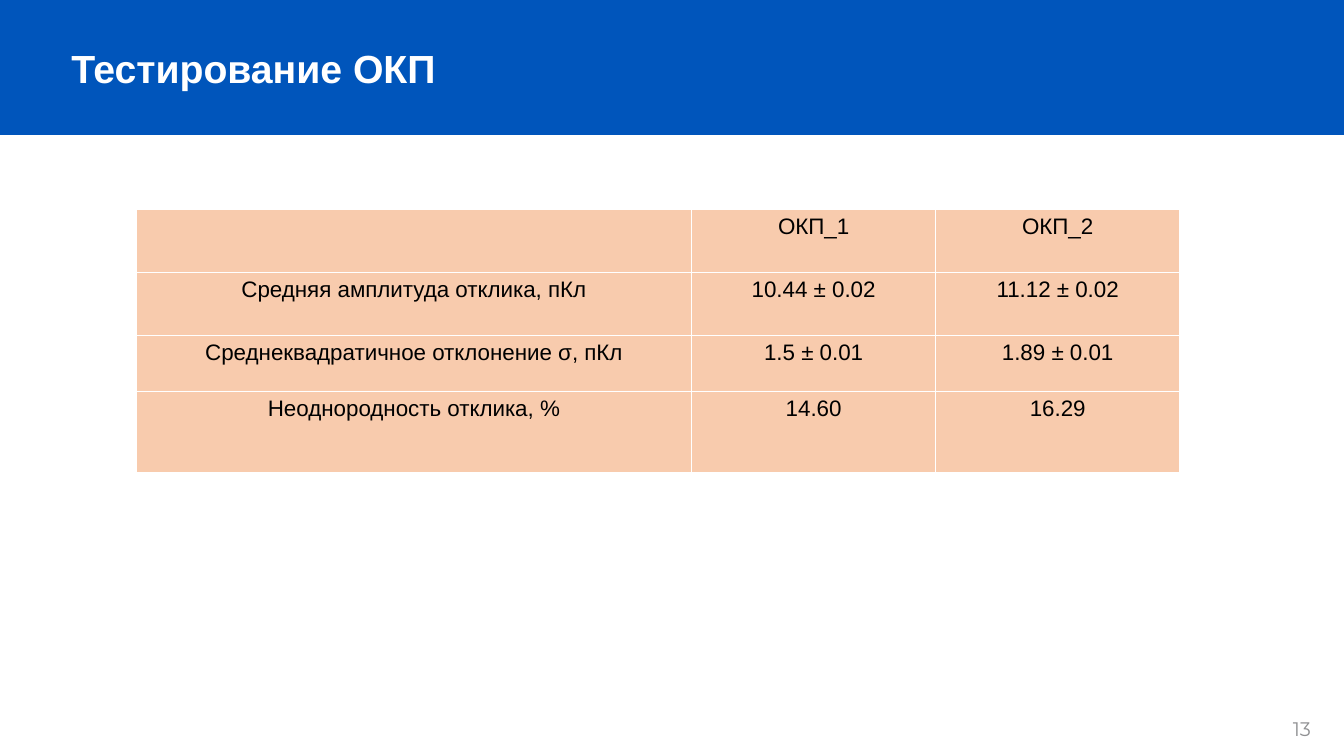
"""Build the slide with the detector test results table."""
from lxml.etree import SubElement
from pptx import Presentation
from pptx.dml.color import RGBColor
from pptx.enum.shapes import MSO_SHAPE
from pptx.enum.text import MSO_ANCHOR, PP_ALIGN
from pptx.oxml.ns import qn
from pptx.util import Cm, Pt

TITLE = "Тестирование ОКП"
PAGE = "13"
ROWS = [
    ("", "ОКП_1", "ОКП_2"),
    ("Средняя амплитуда отклика, пКл", "10.44 ± 0.02", "11.12 ± 0.02"),
    ("Среднеквадратичное отклонение σ, пКл", "1.5 ± 0.01", "1.89 ± 0.01"),
    ("Неоднородность отклика, %", "14.60", "16.29"),
]
WIDTHS = (13.99, 6.15, 6.15)
HEIGHTS = (1.59, 1.59, 1.41, 2.03)
COLORS = {"band": "0055BB", "cell": "F8CBAD", "text": "000000",
          "white": "FFFFFF", "page": "8F9092"}


def rgb(name):
    return RGBColor.from_string(COLORS[name])


def style(par, size, color, face="Arial", bold=False):
    font = par.font
    font.size, font.name, font.bold = Pt(size), face, bold
    font.color.rgb = rgb(color)


def add_text(slide, box, text, wrap, *look):
    frame = slide.shapes.add_textbox(*map(Cm, box)).text_frame
    frame.word_wrap = wrap
    frame.text = text
    style(frame.paragraphs[0], *look)
    return frame


def add_edges(cell):
    props = cell._tc.get_or_add_tcPr()
    for side in ("lnL", "lnR", "lnT", "lnB"):
        line = SubElement(props, qn(f"a:{side}"), w=str(Pt(1)))
        fill = SubElement(line, qn("a:solidFill"))
        SubElement(fill, qn("a:srgbClr"), val=COLORS["white"])


def add_grid(slide):
    table = slide.shapes.add_table(
        len(ROWS), len(WIDTHS), Cm(3.44), Cm(5.28),
        Cm(sum(WIDTHS)), Cm(sum(HEIGHTS))).table
    table.first_row = table.horz_banding = False
    for col, width in zip(table.columns, WIDTHS):
        col.width = Cm(width)
    for row, height, texts in zip(table.rows, HEIGHTS, ROWS):
        row.height = Cm(height)
        for cell, text in zip(row.cells, texts):
            cell.text = text
            par = cell.text_frame.paragraphs[0]
            par.alignment = PP_ALIGN.CENTER
            style(par, 16, "text")
            add_edges(cell)
            cell.fill.solid()
            cell.fill.fore_color.rgb = rgb("cell")


def main():
    deck = Presentation()
    deck.slide_width, deck.slide_height = Cm(33.87), Cm(19.05)
    slide = deck.slides.add_slide(deck.slide_layouts[6])
    add_text(slide, (32.33, 17.93, 1.14, 0.86), PAGE, False,
             14, "page", "Montserrat")
    band = slide.shapes.add_shape(
        MSO_SHAPE.RECTANGLE, 0, 0, deck.slide_width, Cm(3.4))
    band.shadow.inherit = False
    band.fill.solid()
    band.fill.fore_color.rgb = rgb("band")
    band.line.fill.background()
    add_grid(slide)
    title = add_text(slide, (1.55, 0.99, 30.78, 1.45), TITLE, True,
                     28, "white", "Arial", True)
    title.vertical_anchor = MSO_ANCHOR.MIDDLE
    deck.save("out.pptx")


if __name__ == "__main__":
    main()
